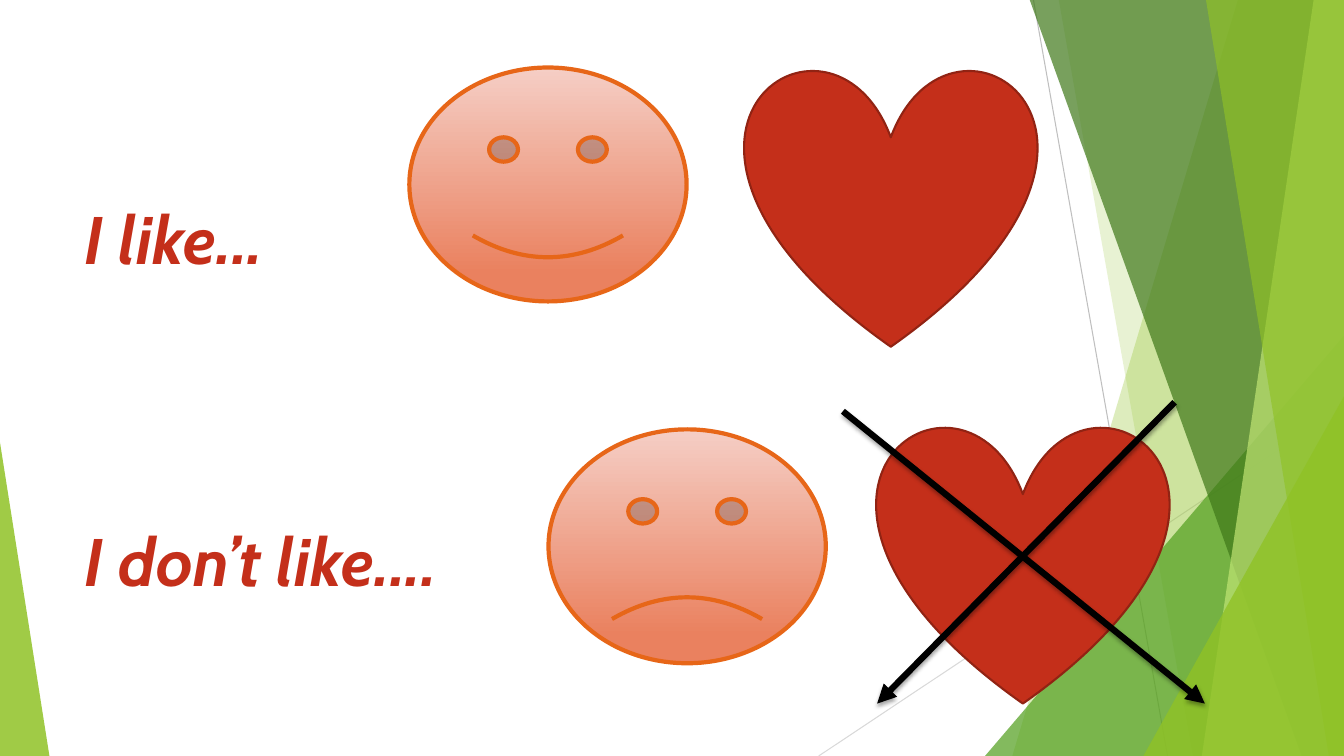
"""Build the "I like / I don't like" slide."""
from pptx import Presentation
from pptx.dml.color import RGBColor as Rgb
from pptx.enum.shapes import MSO_CONNECTOR as Link, MSO_SHAPE as Kind
from pptx.enum.text import MSO_ANCHOR as Anchor
from pptx.oxml.ns import qn
from pptx.util import Inches, Pt
from lxml.etree import SubElement as Sub

WIDE, HIGH = 13.33, 7.5
TOP = -0.01
RED = "C42F1A"
GREEN = "90C226"


def tint(code):
    """Turn a hex string into a colour."""
    return Rgb.from_string(code)


def apply(target, form):
    """Set each attribute named in a dict."""
    for name, value in form.items():
        setattr(target, name, value)


def paint(shape, code, alpha=100):
    """Fill a shape with one colour, without line or shadow."""
    shape.shadow.inherit = False
    shape.fill.solid()
    shape.fill.fore_color.rgb = tint(code)
    shape.line.fill.background()
    if alpha < 100:
        color = shape._element.spPr.find(qn("a:solidFill"))[0]
        Sub(color, qn("a:alpha"), val=str(alpha * 1000))


def edge(shape, code, width):
    """Give a shape or connector a plain line."""
    shape.line.color.rgb = tint(code)
    shape.line.width = Pt(width)


def place(slide, kind, left, top, width, height):
    """Add a preset shape, measured in inches."""
    return slide.shapes.add_shape(kind, *map(Inches, (left, top, width, height)))


def band(slide, upper, lower, code, alpha):
    """Draw a slanted band that reaches the right edge."""
    points = [(WIDE, TOP), (WIDE, HIGH), (lower, HIGH)]
    build = slide.shapes.build_freeform(Inches(upper), Inches(TOP))
    build.add_line_segments([(Inches(x), Inches(y)) for x, y in points])
    paint(build.convert_to_shape(), code, alpha)


def wedge(slide, left, top, width, tip, code, alpha):
    """Draw a right triangle that stands on the bottom edge."""
    shape = place(slide, Kind.ISOSCELES_TRIANGLE, left, top, width, HIGH - top)
    shape.adjustments[0] = tip
    paint(shape, code, alpha)


def link(slide, start, end, code, width):
    """Draw a straight line and return it with its effect list."""
    line = slide.shapes.add_connector(
        Link.STRAIGHT, *map(Inches, (*start, *end)))
    edge(line, code, width)
    return line, Sub(line._element.spPr, qn("a:effectLst"))


def arrow(slide, start, end):
    """Draw a thick black arrow with a soft shadow."""
    line, effects = link(slide, start, end, "000000", 4.5)
    Sub(line.line._get_or_add_ln(), qn("a:tailEnd"), type="triangle")
    shade = Sub(effects, qn("a:outerShdw"), blurRad=str(Pt(3)),
                dist=str(Pt(2)), dir="5400000", rotWithShape="0")
    color = Sub(shade, qn("a:srgbClr"), val="000000")
    Sub(color, qn("a:alpha"), val="35000")


def face(slide, left, top, mouth):
    """Draw a round face with the given mouth bend."""
    shape = place(slide, Kind.SMILEY_FACE, left, top, 2.75, 2.32)
    shape.shadow.inherit = False
    shape.adjustments[0] = mouth
    shape.fill.gradient()
    shape.fill.gradient_angle = 270
    stops = [(0, "F5CEC5"), (0.88, "EA815F")]
    for stop, (spot, code) in zip(shape.fill.gradient_stops, stops):
        stop.position = spot
        stop.color.rgb = tint(code)
    edge(shape, "E76618", 3)


def heart(slide, left, top):
    """Draw a red heart."""
    shape = place(slide, Kind.HEART, left, top, 2.89, 2.77)
    paint(shape, RED)
    edge(shape, "912313", 1.5)


def words(slide, lines):
    """Write the phrases, spread down the slide."""
    box = slide.shapes.add_textbox(*map(Inches, (0.74, 0.67, 9.4, 6.46)))
    frame = box.text_frame
    apply(frame, {"word_wrap": True, "vertical_anchor": Anchor.MIDDLE,
                  "margin_top": Inches(0.16)})
    frame.text = "\n".join(lines)
    for para in frame.paragraphs:
        apply(para.font, {"name": "Cabin", "size": Pt(48),
                          "bold": True, "italic": True})
        para.font.color.rgb = tint(RED)
    frame.paragraphs[1].space_before = Pt(172)


def decor(slide):
    """Draw the green facets at both sides."""
    link(slide, (10.25, 0), (11.58, HIGH), "BFBFBF", 0.75)
    link(slide, (WIDE, 4.03), (8.12, HIGH), "D9D9D9", 0.75)
    band(slide, 12.28, 10.04, GREEN, 30)
    band(slide, 10.5, 11.83, GREEN, 20)
    wedge(slide, 9.77, 3.33, 3.56, 1, "54A021", 72)
    band(slide, 10.21, 12.91, "3F7819", 70)
    band(slide, 13.03, 11.92, "C0E474", 70)
    band(slide, 11.96, 13.18, GREEN, 65)
    wedge(slide, 11.34, 3.93, 1.99, 1, GREEN, 80)
    wedge(slide, 0, 4.39, 0.49, 0, GREEN, 85)


def main():
    """Build and save the slide."""
    deck = Presentation()
    apply(deck, {"slide_width": Inches(WIDE), "slide_height": Inches(HIGH)})
    slide = deck.slides.add_slide(deck.slide_layouts[6])
    decor(slide)
    words(slide, ["I like...", "I don’t like...."])
    face(slide, 4.06, 0.67, 0.05)
    heart(slide, 7.39, 0.67)
    face(slide, 5.44, 4.26, -0.05)
    heart(slide, 8.7, 4.21)
    arrow(slide, (8.36, 4.08), (11.95, 6.98))
    arrow(slide, (11.65, 3.99), (8.7, 6.98))
    deck.save("out.pptx")


if __name__ == "__main__":
    main()
